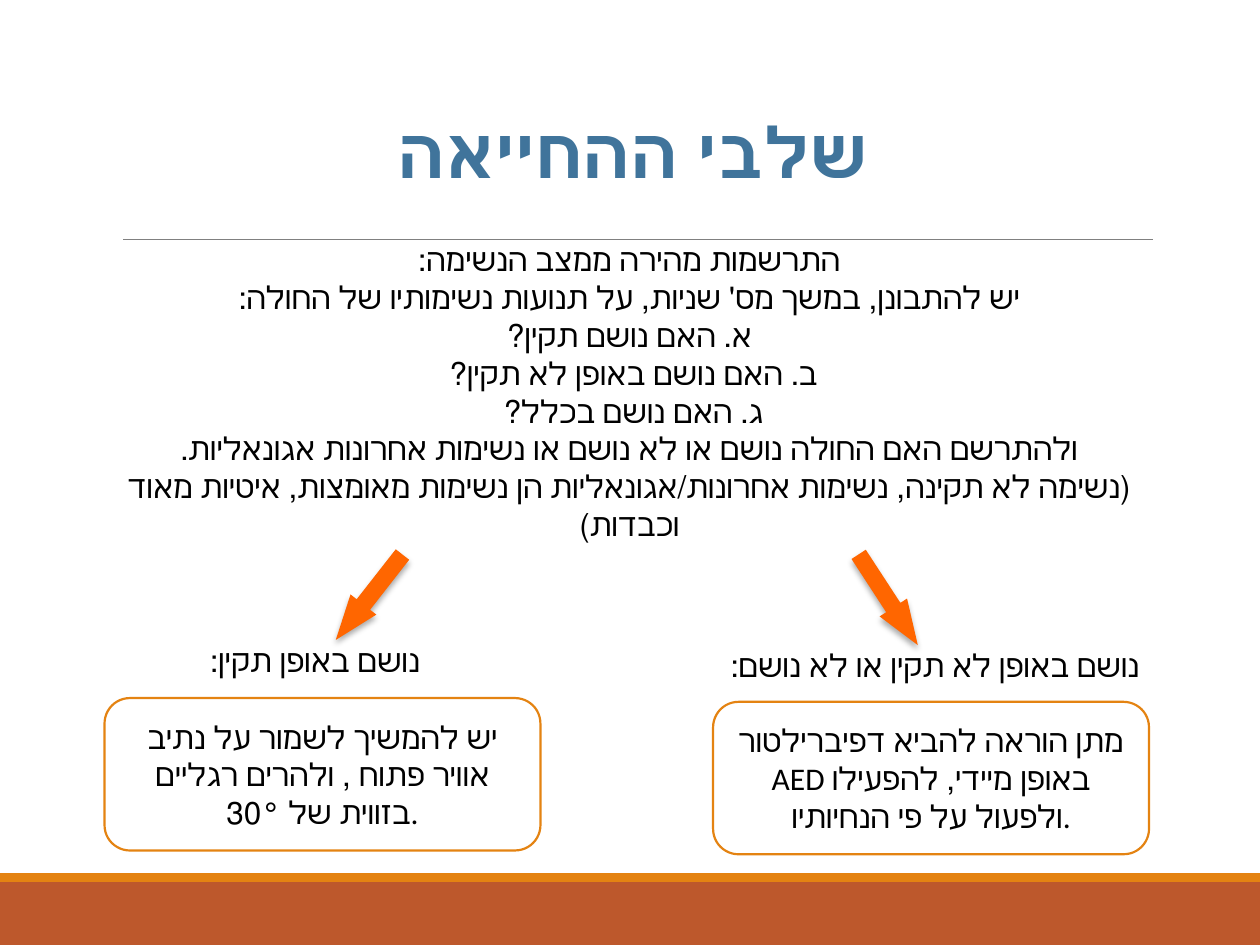
from lxml.etree import SubElement
from pptx import Presentation
from pptx.dml.color import RGBColor
from pptx.enum.shapes import MSO_CONNECTOR, MSO_SHAPE as Shape
from pptx.enum.text import MSO_ANCHOR as Anchor, MSO_AUTO_SIZE, PP_ALIGN as Align
from pptx.oxml.ns import qn
from pptx.util import Inches, Pt

FONT = "Calibri"
ORANGE, RUST, ARROW, BLUE = "E48312", "BD582C", "FF6600", "40749B"

ASSESSMENT = [
    "התרשמות מהירה ממצב הנשימה:",
    "יש להתבונן, במשך מס' שניות, על תנועות נשימותיו של החולה:\n א. האם נושם תקין? ",
    "ב. האם נושם באופן לא תקין? ",
    "ג. האם נושם בכלל? \n"
    "ולהתרשם האם החולה נושם או לא נושם או נשימות אחרונות אגונאליות.\n"
    "(נשימה לא תקינה, נשימות אחרונות/אגונאליות הן נשימות מאומצות, איטיות מאוד וכבדות)",
]


def color(hex_value):
    return RGBColor.from_string(hex_value)


def place(sp, left, top, width, height):
    sp.left, sp.top = Inches(left), Inches(top)
    sp.width, sp.height = Inches(width), Inches(height)


def write(sp, paragraphs, size=18, fill="000000", bold=False, align=Align.CENTER,
          anchor=Anchor.TOP, rtl=True, spacing=None):
    """Fill a shape with paragraphs; a newline inside one is a line break."""
    tf = sp.text_frame
    tf.word_wrap = True
    tf.auto_size = MSO_AUTO_SIZE.NONE
    tf.vertical_anchor = anchor
    for i, text in enumerate(paragraphs):
        p = tf.paragraphs[0] if i == 0 else tf.add_paragraph()
        p.text = text
        p.alignment = align
        p.line_spacing = spacing
        if rtl:
            p._p.get_or_add_pPr().set("rtl", "1")
        for r in p.runs:
            r.font.name, r.font.size, r.font.bold = FONT, Pt(size), bold
            r.font.color.rgb = color(fill)


def add_text(slide, box, paragraphs, **fmt):
    sp = slide.shapes.add_textbox(0, 0, 0, 0)
    place(sp, *box)
    write(sp, paragraphs, **fmt)


def add_block(slide, kind, box, fill, line=None):
    sp = slide.shapes.add_shape(kind, *map(Inches, box))
    sp.shadow.inherit = False
    sp.fill.solid()
    sp.fill.fore_color.rgb = color(fill)
    if line:
        sp.line.color.rgb = color(line)
        sp.line.width = Pt(1.25)
    else:
        sp.line.fill.background()
    return sp


def add_rule(slide, x1, x2, y):
    line = slide.shapes.add_connector(
        MSO_CONNECTOR.STRAIGHT, Inches(x1), Inches(y), Inches(x2), Inches(y))
    line.line.color.rgb = color("808080")
    line.line.width = Pt(0.5)
    SubElement(line._element.spPr, qn("a:effectLst"))


def add_arrow(slide, left, top, rotation):
    sp = add_block(slide, Shape.DOWN_ARROW, (left, top, 0.26, 0.86), ARROW)
    sp.rotation = rotation
    sp.adjustments[0], sp.adjustments[1] = 0.52, 1.37
    effects = sp._element.spPr.find(qn("a:effectLst"))
    shadow = SubElement(effects, qn("a:outerShdw"), blurRad=str(Pt(3.5)),
                        dist=str(Pt(2.2)), dir="5400000", rotWithShape="0")
    black = SubElement(shadow, qn("a:srgbClr"), val="000000")
    SubElement(black, qn("a:alpha"), val="32000")


def add_action(slide, left, top, text):
    sp = add_block(slide, Shape.ROUNDED_RECTANGLE, (left, top, 3.46, 1.21), "FFFFFF", ORANGE)
    write(sp, [text], anchor=Anchor.MIDDLE, rtl=False)


def main():
    prs = Presentation()
    prs.slide_width, prs.slide_height = Inches(10), Inches(7.5)
    slide = prs.slides.add_slide(prs.slide_layouts[5])

    add_block(slide, Shape.RECTANGLE, (0, 7, 10, 0.5), RUST)
    add_block(slide, Shape.RECTANGLE, (0, 6.93, 10, 0.07), ORANGE)
    add_rule(slide, 0.98, 9.15, 1.9)

    title = slide.shapes.title
    place(title, 0.9, -0.01, 8.25, 1.59)
    write(title, ["שלבי ההחייאה"], size=40, fill=BLUE, bold=True,
          anchor=Anchor.BOTTOM, spacing=0.85)
    add_text(slide, (0.65, 1.86, 8.69, 3.13), ASSESSMENT)

    add_arrow(slide, 2.8, 4.31, 38)
    add_arrow(slide, 6.92, 4.33, 326.9)
    add_text(slide, (4.89, 5.08, 5, 0.4), ["נושם באופן לא תקין או לא נושם: "])
    add_text(slide, (1.57, 5.04, 5, 0.4), ["נושם באופן תקין:"], align=Align.LEFT)
    add_action(slide, 5.66, 5.57,
               "מתן הוראה להביא דפיברילטור AED באופן מיידי, להפעילו ולפעול על פי הנחיותיו.")
    add_action(slide, 0.83, 5.54,
               "יש להמשיך לשמור על נתיב אוויר פתוח , ולהרים רגליים בזווית של 30°.")

    prs.save("out.pptx")


if __name__ == "__main__":
    main()
